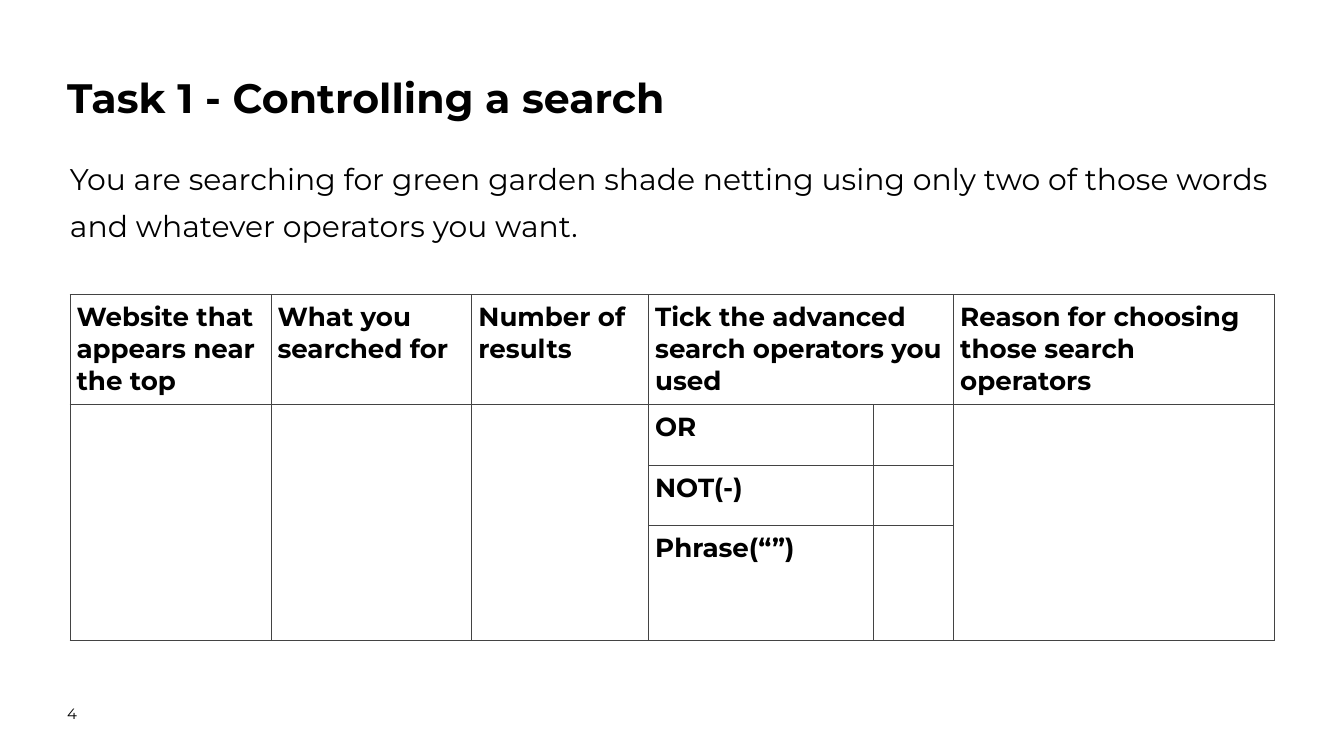
from dataclasses import dataclass

from lxml.etree import SubElement
from pptx import Presentation
from pptx.dml.color import RGBColor
from pptx.enum.text import MSO_ANCHOR as Anchor, MSO_AUTO_SIZE as AutoSize, PP_ALIGN as Align
from pptx.oxml.ns import qn
from pptx.util import Inches, Pt

GRID_COLUMNS, GRID_ROWS = 20, 11.25
UNIT = Inches(1)


@dataclass(frozen=True)
class Theme:
    font: str = "Montserrat"
    ink: str = "000000"
    paper: str = "FFFFFF"
    rule: str = "434343"
    rule_width: float = 0.75
    title: int = 44
    body: int = 32
    table: int = 28
    number: int = 16


@dataclass(frozen=True)
class Area:
    """A rectangle in grid columns and rows."""
    column: float
    row: float
    width: float
    height: float

    def lengths(self) -> list[int]:
        return [round(n * UNIT) for n in (self.column, self.row, self.width, self.height)]


@dataclass(frozen=True)
class Label:
    row: int
    column: int
    text: str


@dataclass(frozen=True)
class Merge:
    first: tuple[int, int]
    last: tuple[int, int]


THEME = Theme()
TITLE_AREA = Area(1, 0.97, 17.95, 1.26)
BODY_AREA = Area(1.04, 2.23, 17.95, 2.15)
NUMBER_AREA = Area(1, 10.48, 1.57, 0.39)

COLUMN_WIDTHS = (2.99, 2.99, 2.63, 3.34, 1.2, 4.77)
ROW_HEIGHTS = (1.64, 0.9, 0.9, 1.71)
TABLE_AREA = Area(1.04, 4.38, sum(COLUMN_WIDTHS), sum(ROW_HEIGHTS))
OPERATOR_COLUMN = 3
ANSWER_COLUMNS = (0, 1, 2, 5)

HEADINGS = (
    Label(0, 0, "Website that appears near the top"),
    Label(0, 1, "What you searched for"),
    Label(0, 2, "Number of results"),
    Label(0, OPERATOR_COLUMN, "Tick the advanced search operators you used"),
    Label(0, 5, "Reason for choosing those search operators"),
)
OPERATORS = tuple(
    Label(row, OPERATOR_COLUMN, text)
    for row, text in enumerate(("OR", "NOT(-)", "Phrase(“”)"), start=1)
)
MERGES = (
    Merge((0, OPERATOR_COLUMN), (0, OPERATOR_COLUMN + 1)),
    *(Merge((1, column), (3, column)) for column in ANSWER_COLUMNS),
)


def write(frame, text: str, *, size: int, bold: bool = False, spacing: float = 1.0) -> None:
    """Fill a text frame with one left-aligned, unbulleted paragraph."""
    frame.word_wrap = True
    para = frame.paragraphs[0]
    properties = para._p.get_or_add_pPr()
    properties.set("marL", "0")
    properties.set("indent", "0")
    SubElement(properties, qn("a:buNone"))
    para.alignment = Align.LEFT
    para.line_spacing = spacing
    para.space_before = Pt(0)
    span = para.add_run()
    span.text = text
    span.font.name = THEME.font
    span.font.size = Pt(size)
    span.font.bold = bold
    span.font.color.rgb = RGBColor.from_string(THEME.ink)


def place(box, area: Area) -> None:
    """Move a text box to its area, with no insets and top anchoring."""
    box.left, box.top, box.width, box.height = area.lengths()
    frame = box.text_frame
    frame.margin_left = frame.margin_top = frame.margin_right = frame.margin_bottom = 0
    frame.vertical_anchor = Anchor.TOP
    frame.auto_size = AutoSize.NONE


def format_cell(cell) -> None:
    """Give a cell even margins, thin borders and a plain fill."""
    cell.margin_left = cell.margin_top = cell.margin_right = cell.margin_bottom = Inches(0.1)
    properties = cell._tc.get_or_add_tcPr()
    for side in ("lnL", "lnR", "lnT", "lnB"):
        line = SubElement(properties, qn(f"a:{side}"), w=str(Pt(THEME.rule_width)))
        fill = SubElement(line, qn("a:solidFill"))
        SubElement(fill, qn("a:srgbClr"), val=THEME.rule)
    cell.fill.solid()
    cell.fill.fore_color.rgb = RGBColor.from_string(THEME.paper)


def add_search_table(page) -> None:
    table = page.shapes.add_table(
        len(ROW_HEIGHTS), len(COLUMN_WIDTHS), *TABLE_AREA.lengths()
    ).table
    table.first_row = table.horz_banding = False
    for column, width in zip(table.columns, COLUMN_WIDTHS):
        column.width = round(width * UNIT)
    for row, height in zip(table.rows, ROW_HEIGHTS):
        row.height = round(height * UNIT)
    for cell in table.iter_cells():
        format_cell(cell)
    for merge in MERGES:
        table.cell(*merge.first).merge(table.cell(*merge.last))
    for label in HEADINGS + OPERATORS:
        frame = table.cell(label.row, label.column).text_frame
        write(frame, label.text, size=THEME.table, bold=True)


def main() -> None:
    deck = Presentation()
    deck.slide_width = round(GRID_COLUMNS * UNIT)
    deck.slide_height = round(GRID_ROWS * UNIT)
    page = deck.slides.add_slide(deck.slide_layouts[1])
    page.background.fill.solid()
    page.background.fill.fore_color.rgb = RGBColor.from_string(THEME.paper)

    title, body = page.shapes.title, page.placeholders[1]
    place(title, TITLE_AREA)
    write(title.text_frame, "Task 1 - Controlling a search",
          size=THEME.title, bold=True, spacing=1.15)
    place(body, BODY_AREA)
    write(body.text_frame,
          "You are searching for green garden shade netting using only two of those words "
          "and whatever operators you want.",
          size=THEME.body, spacing=1.3)

    add_search_table(page)

    number = page.shapes.add_textbox(*NUMBER_AREA.lengths())
    place(number, NUMBER_AREA)
    write(number.text_frame, "4", size=THEME.number)

    deck.save("out.pptx")


if __name__ == "__main__":
    main()
